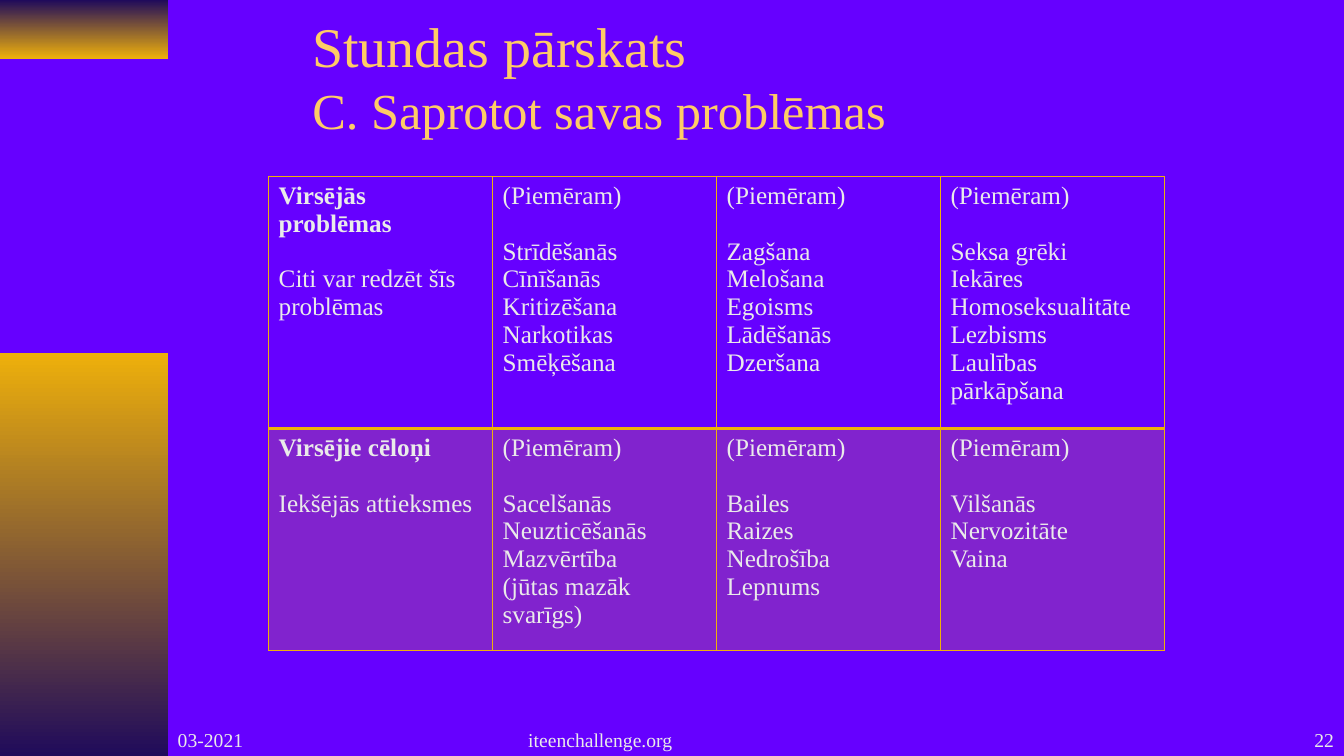
from dataclasses import dataclass

from lxml.etree import SubElement
from pptx import Presentation
from pptx.dml.color import RGBColor
from pptx.enum.shapes import MSO_SHAPE
from pptx.enum.text import MSO_ANCHOR as ANCHOR, PP_ALIGN as ALIGN
from pptx.oxml import parse_xml
from pptx.oxml.ns import nsdecls, qn
from pptx.util import Cm, Pt

FONT = "Times New Roman"
GOLD, NAVY, VIOLET = "EEB00B", "200B5B", "6600FF"
TITLE_COLOR, TEXT_COLOR = "FFCC66", "EAEAEA"
EXAMPLE = "(Piemēram)"


@dataclass
class Band:
    top: float
    height: float
    colors: tuple[str, str]


@dataclass
class Footer:
    left: float
    width: float
    text: str
    align: ALIGN


@dataclass
class Row:
    height: float
    heading: str
    note: str
    examples: list[list[str]]
    tinted: bool
    borders: dict[str, int]


BANDS = [
    Band(0, 1.48, (NAVY, GOLD)),
    Band(8.89, 10.16, (GOLD, NAVY)),
]
FOOTERS = [
    Footer(4.23, 7.06, "03-2021", ALIGN.LEFT),
    Footer(8.04, 14.18, "iteenchallenge.org", ALIGN.CENTER),
    Footer(26.81, 7.06, "22", ALIGN.RIGHT),
]
ROWS = [
    Row(6.35, "Virsējās problēmas", "Citi var redzēt šīs problēmas", [
        ["Strīdēšanās", "Cīnīšanās", "Kritizēšana", "Narkotikas", "Smēķēšana"],
        ["Zagšana", "Melošana", "Egoisms", "Lādēšanās", "Dzeršana"],
        ["Seksa grēki", "Iekāres", "Homoseksualitāte", "Lezbisms",
         "Laulības pārkāpšana"],
    ], False, {"L": 1, "R": 1, "T": 1, "B": 2}),
    Row(5.59, "Virsējie cēloņi", "Iekšējās attieksmes", [
        ["Sacelšanās", "Neuzticēšanās", "Mazvērtība", "(jūtas mazāk svarīgs)"],
        ["Bailes", "Raizes", "Nedrošība", "Lepnums"],
        ["Vilšanās", "Nervozitāte", "Vaina"],
    ], True, {"L": 1, "R": 1, "T": 2, "B": 1}),
]


def rgb(color: str) -> RGBColor:
    return RGBColor.from_string(color)


def add_run(p, text: str, size: int, color: str = TEXT_COLOR, bold: bool = False) -> None:
    r = p.add_run()
    r.text = text
    for name, value in {"name": FONT, "size": Pt(size), "bold": bold}.items():
        setattr(r.font, name, value)
    r.font.color.rgb = rgb(color)


def add_box(s, left: float, top: float, width: float, height: float, anchor: ANCHOR):
    """Add an empty wrapping text box and return its first paragraph."""
    tf = s.shapes.add_textbox(Cm(left), Cm(top), Cm(width), Cm(height)).text_frame
    tf.word_wrap = True
    tf.vertical_anchor = anchor
    return tf.paragraphs[0]


def add_band(s, band: Band) -> None:
    sp = s.shapes.add_shape(MSO_SHAPE.RECTANGLE, 0, Cm(band.top), Cm(4.23), Cm(band.height))
    sp.shadow.inherit = False
    sp.line.fill.background()
    sp.fill.gradient()
    sp.fill.gradient_angle = 270
    for stop, color in zip(sp.fill.gradient_stops, band.colors):
        stop.color.rgb = rgb(color)


def format_cell(cell, row: Row) -> None:
    """Set the fill and the four borders of a cell."""
    tc_pr = cell._tc.get_or_add_tcPr()
    if row.tinted:
        cell.fill.solid()
        cell.fill.fore_color.rgb = rgb(GOLD)
        SubElement(tc_pr.find(".//" + qn("a:srgbClr")), qn("a:alpha"), val="20000")
    else:
        cell.fill.background()
    for i, (side, width) in enumerate(row.borders.items()):
        tc_pr.insert(i, parse_xml(
            f'<a:ln{side} {nsdecls("a")} w="{Pt(width)}"><a:solidFill>'
            f'<a:srgbClr val="{GOLD}"/></a:solidFill></a:ln{side}>'))


def fill_cell(cell, lines: list[str], bold_heading: bool) -> None:
    """Write a heading line, then the other lines after a one-line gap."""
    tf = cell.text_frame
    for i, line in enumerate(lines):
        p = tf.add_paragraph() if i else tf.paragraphs[0]
        if i == 1:
            p.space_before = Pt(20)
        add_run(p, line, 18, bold=bold_heading and i == 0)


def add_problem_table(s) -> None:
    height = sum(row.height for row in ROWS)
    table = s.shapes.add_table(len(ROWS), 4, Cm(6.77), Cm(4.45), Cm(22.58), Cm(height)).table
    table.first_row = table.horz_banding = False
    for i, row in enumerate(ROWS):
        table.rows[i].height = Cm(row.height)
        columns = [[row.heading, row.note]] + [[EXAMPLE, *names] for names in row.examples]
        for j, lines in enumerate(columns):
            cell = table.cell(i, j)
            format_cell(cell, row)
            fill_cell(cell, lines, j == 0)


def main() -> None:
    prs = Presentation()
    prs.slide_width, prs.slide_height = Cm(33.87), Cm(19.05)
    s = prs.slides.add_slide(prs.slide_layouts[6])
    s.background.fill.solid()
    s.background.fill.fore_color.rgb = rgb(VIOLET)

    for band in BANDS:
        add_band(s, band)

    title = add_box(s, 7.62, 0, 21.59, 3.81, ANCHOR.MIDDLE)
    add_run(title, "Stundas pārskats", 40, TITLE_COLOR)
    title.add_line_break()
    add_run(title, "C. Saprotot savas problēmas", 36, TITLE_COLOR)

    add_problem_table(s)

    for footer in FOOTERS:
        p = add_box(s, footer.left, 17.78, footer.width, 1.27, ANCHOR.BOTTOM)
        p.alignment = footer.align
        add_run(p, footer.text, 14)

    prs.save("out.pptx")


if __name__ == "__main__":
    main()
